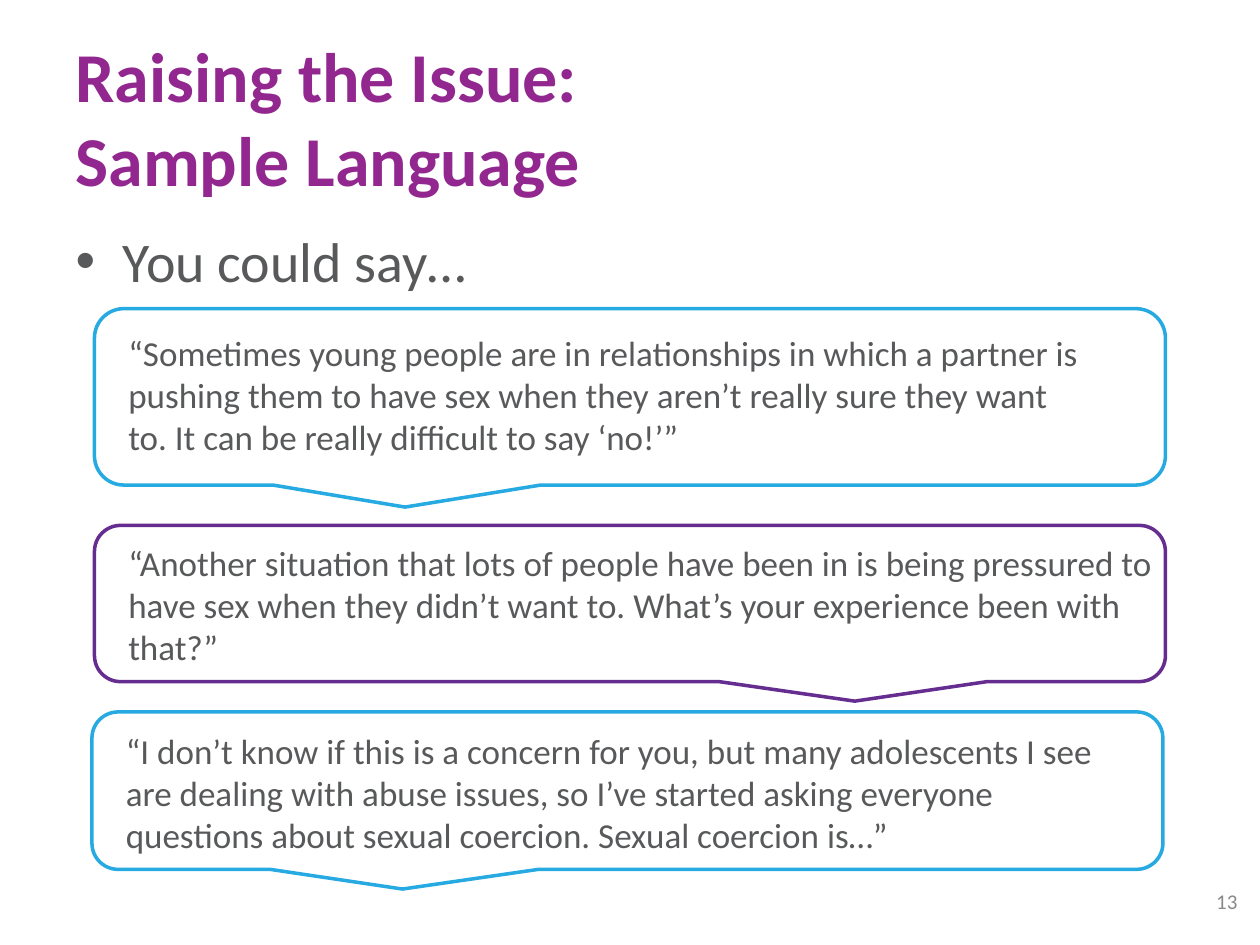
from dataclasses import dataclass

from pptx import Presentation
from pptx import util as u
from pptx.dml.color import RGBColor
from pptx.enum import shapes, text


@dataclass(frozen=True)
class Theme:
    font: str = "Calibri"
    title: str = "92278F"
    body: str = "58595B"
    number: str = "898989"
    paper: str = "FFFFFF"
    blue: str = "27AAE1"
    purple: str = "662D91"
    title_size: int = 40
    list_size: int = 32
    quote_size: int = 20
    number_size: int = 12


@dataclass(frozen=True)
class Box:
    left: float
    top: float
    width: float
    height: float

    def inset(self, left, top, right, bottom):
        return Box(self.left + left, self.top + top,
                   self.width - left - right, self.height - top - bottom)

    def lengths(self):
        return [u.Inches(side) for side in
                (self.left, self.top, self.width, self.height)]


THEME = Theme()
PAGE = Box(0, 0, 10, 7.5)
TAIL_SHIFT = 0.21  # share of the bubble's width, from its centre
QUOTE_HEIGHT = 1.11

# Bubble box, outline, tail side (-1 left, 1 right), text insets, wording
QUOTES = [
    (Box(0.75, 2.45, 8.5, 1.4), THEME.blue, -1, (0.17, 0.13, 0.5),
     "“Sometimes young people are in relationships in which a partner is "
     "pushing them to have sex when they aren’t really sure they want to. "
     "It can be really difficult to say ‘no!’”"),
    (Box(0.75, 4.17, 8.5, 1.24), THEME.purple, 1, (0.17, 0.08, 0),
     "“Another situation that lots of people have been in is being pressured "
     "to have sex when they didn’t want to. What’s your experience been with "
     "that?”"),
    (Box(0.73, 5.65, 8.5, 1.25), THEME.blue, -1, (0.17, 0.09, 0.13),
     "“I don’t know if this is a concern for you, but many adolescents I see "
     "are dealing with abuse issues, so I’ve started asking everyone "
     "questions about sexual coercion. Sexual coercion is…”"),
]


def write(shape, words, size, color, bold=False,
          align=text.PP_ALIGN.LEFT, anchor=text.MSO_ANCHOR.TOP):
    frame = shape.text_frame
    frame.text = words
    frame.word_wrap = True
    frame.auto_size = text.MSO_AUTO_SIZE.NONE
    frame.vertical_anchor = anchor
    para = frame.paragraphs[0]
    para.alignment = align
    para.space_before = u.Pt(0)
    span = para.runs[0]
    span.font.name = THEME.font
    span.font.size = u.Pt(size)
    span.font.bold = bold
    span.font.color.rgb = RGBColor.from_string(color)


def place(shape, box):
    shape.left, shape.top, shape.width, shape.height = box.lengths()


def add_heading(page, box):
    place(page.shapes.title, box)
    write(page.shapes.title, "Raising the Issue: Sample Language",
          THEME.title_size, THEME.title, bold=True,
          anchor=text.MSO_ANCHOR.MIDDLE)


def add_lead(page, box):
    # The bullet and hanging indent come from the body placeholder
    body = page.placeholders[1]
    place(body, box)
    write(body, "You could say…", THEME.list_size, THEME.body)


def add_quote(page, box, color, side, insets, words):
    group = page.shapes.add_group_shape()

    # Speech bubble
    bubble = group.shapes.add_shape(
        shapes.MSO_SHAPE.ROUNDED_RECTANGULAR_CALLOUT, *box.lengths())
    bubble.adjustments[0] = side * TAIL_SHIFT
    bubble.shadow.inherit = False
    bubble.fill.solid()
    bubble.fill.fore_color.rgb = RGBColor.from_string(THEME.paper)
    bubble.line.color.rgb = RGBColor.from_string(color)
    bubble.line.width = u.Pt(2)

    # Quoted words
    left, top, right = insets
    area = box.inset(left, top, right, box.height - top - QUOTE_HEIGHT)
    quote = group.shapes.add_textbox(*area.lengths())
    write(quote, words, THEME.quote_size, THEME.body)


def add_page_number(page, box):
    number = page.shapes.add_textbox(*box.lengths())
    write(number, "13", THEME.number_size, THEME.number,
          align=text.PP_ALIGN.RIGHT, anchor=text.MSO_ANCHOR.MIDDLE)


def main():
    deck = Presentation()
    deck.slide_width = u.Inches(PAGE.width)
    deck.slide_height = u.Inches(PAGE.height)
    page = deck.slides.add_slide(deck.slide_layouts[1])

    add_heading(page, PAGE.inset(0.5, 0.3, 4.08, 5.95))
    add_lead(page, PAGE.inset(0.5, 1.75, 0.5, 5.15))
    for quote in QUOTES:
        add_quote(page, *quote)
    add_page_number(page, PAGE.inset(9.42, 6.95, 0.08, 0.15))

    deck.save("out.pptx")


if __name__ == "__main__":
    main()
